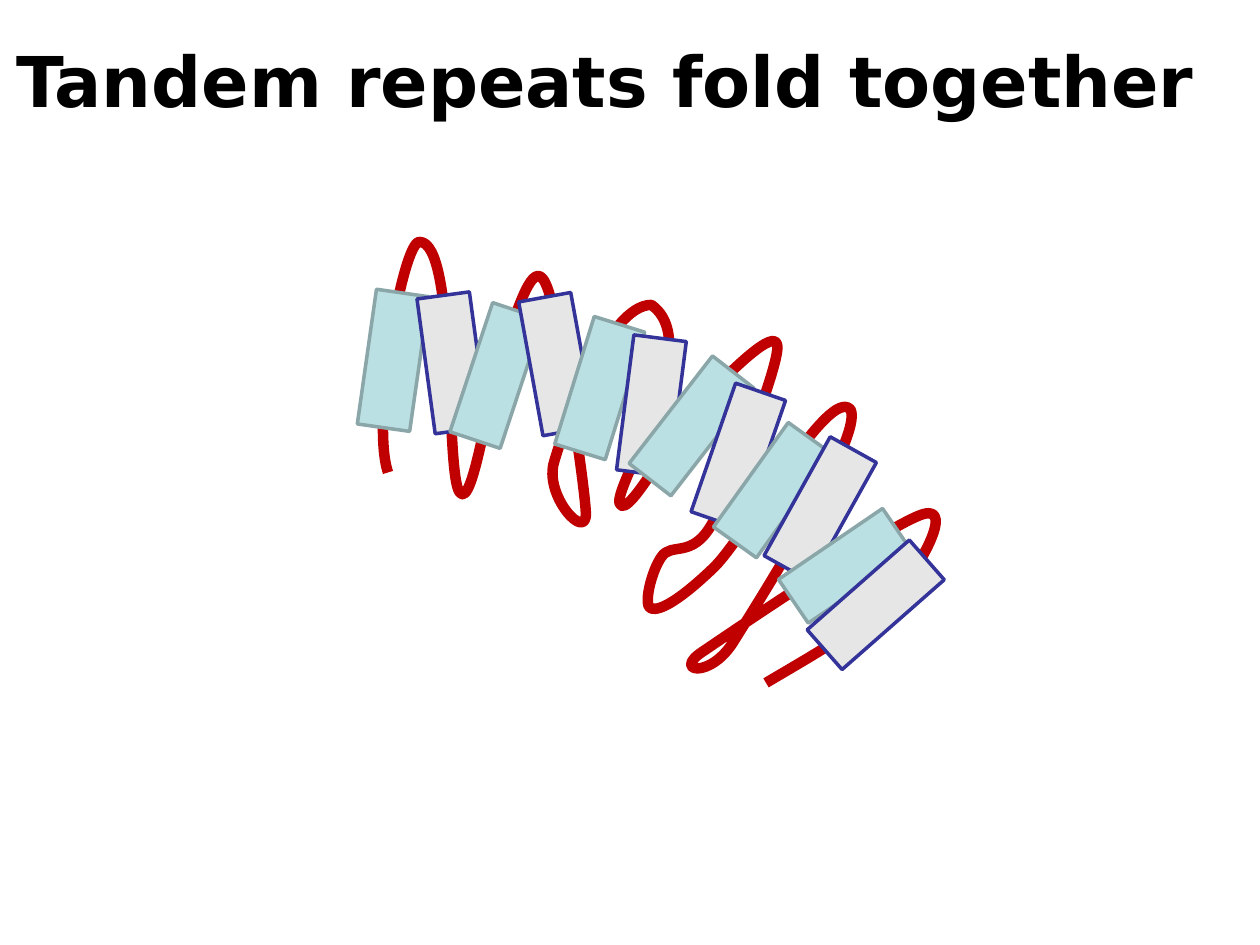
from dataclasses import dataclass

import pptx
import pptx.dml.color
import pptx.enum.shapes
import pptx.enum.text
import pptx.oxml
import pptx.oxml.ns
import pptx.util
from pptx.util import Inches


@dataclass(frozen=True)
class Theme:
    font: str = "DejaVu Sans"
    title_size: int = 40
    text: str = "000000"
    chain: str = "C00000"
    chain_width: float = 6
    first_helix: tuple = ("BBE0E3", "8AA6A8")
    second_helix: tuple = ("E6E6E6", "333399")
    helix_line_width: float = 2


THEME = Theme()
HELIX_WIDTH = 0.42

# Each repeat is two helices: left, top, length, rotation
REPEATS = [
    ((2.58, 2.65, 1.08, 278.1), (3.05, 2.67, 1.08, 82.3)),
    ((3.40, 2.77, 1.08, 288.3), (3.88, 2.68, 1.08, 79.7)),
    ((4.23, 2.87, 1.06, 287.2), (4.63, 3.01, 1.08, 97.3)),
    ((4.95, 3.17, 1.08, 307.8), (5.32, 3.41, 1.08, 109.1)),
    ((5.62, 3.68, 1.02, 305.6), (5.97, 3.83, 1.08, 299.1)),
    ((6.21, 4.28, 1.00, 325.7), (6.41, 4.59, 1.08, 318.7)),
]

# Start of the chain, then two control points and an end point for each curve
CHAIN_START = (3.08, 3.75)
CHAIN_CURVES = [
    ((2.94, 3.34), (3.20, 1.91), (3.33, 1.92)),
    ((3.63, 1.92), (3.53, 3.77), (3.65, 3.91)),
    ((3.76, 4.05), (3.89, 3.03), (4.00, 2.75)),
    ((4.11, 2.47), (4.23, 2.03), (4.33, 2.25)),
    ((4.44, 2.47), (4.64, 3.84), (4.65, 4.07)),
    ((4.66, 4.31), (4.31, 3.93), (4.40, 3.66)),
    ((4.48, 3.38), (4.83, 2.42), (5.17, 2.42)),
    ((5.62, 2.74), (4.85, 3.88), (4.92, 4.00)),
    ((4.99, 4.13), (5.37, 3.38), (5.58, 3.17)),
    ((5.79, 2.96), (6.16, 2.58), (6.17, 2.75)),
    ((6.18, 2.92), (5.80, 3.88), (5.65, 4.16)),
    ((5.49, 4.44), (5.33, 4.30), (5.25, 4.42)),
    ((5.17, 4.53), (5.10, 4.82), (5.17, 4.83)),
    ((5.24, 4.85), (5.40, 4.76), (5.67, 4.50)),
    ((5.93, 4.24), (6.58, 3.06), (6.75, 3.25)),
    ((6.86, 3.45), (6.03, 4.76), (5.83, 5.08)),
    ((5.64, 5.40), (5.33, 5.33), (5.58, 5.17)),
    ((5.83, 5.00), (7.08, 4.15), (7.33, 4.08)),
    ((7.58, 4.01), (7.29, 4.53), (7.08, 4.75)),
    ((6.87, 4.97), (6.33, 5.27), (6.08, 5.42)),
]


def rgb(value):
    return pptx.dml.color.RGBColor.from_string(value)


def write_text(text_frame, text, *, size, color, bold=False, alignment=None):
    paragraph = text_frame.paragraphs[0]
    paragraph.alignment = alignment
    run = paragraph.add_run()
    run.text = text
    run.font.name = THEME.font
    run.font.size = pptx.util.Pt(size)
    run.font.bold = bold
    run.font.color.rgb = rgb(color)


def set_line(shape, color, width):
    shape.shadow.inherit = False
    shape.line.color.rgb = rgb(color)
    shape.line.width = pptx.util.Pt(width)


def add_title(slide, text):
    title = slide.shapes.title
    title.left, title.top = Inches(0), Inches(0.25)
    title.width, title.height = Inches(9.6), Inches(0.77)
    frame = title.text_frame
    frame.word_wrap = False
    frame.auto_size = pptx.enum.text.MSO_AUTO_SIZE.SHAPE_TO_FIT_TEXT
    frame.vertical_anchor = pptx.enum.text.MSO_ANCHOR.TOP
    write_text(frame, text, size=THEME.title_size, color=THEME.text, bold=True,
               alignment=pptx.enum.text.PP_ALIGN.CENTER)


def add_chain(slide):
    start_x, start_y = map(Inches, CHAIN_START)
    builder = slide.shapes.build_freeform(start_x, start_y)
    builder.add_line_segments(
        [(Inches(x), Inches(y)) for curve in CHAIN_CURVES for x, y in curve],
        close=False)
    chain = builder.convert_to_shape()
    chain.fill.background()
    set_line(chain, THEME.chain, THEME.chain_width)

    # Merge every three straight segments into one Bézier curve
    qn = pptx.oxml.ns.qn
    segments = list(chain.element.iter(qn("a:lnTo")))
    for index in range(0, len(segments), 3):
        curve = pptx.oxml.parse_xml(
            f"<a:cubicBezTo {pptx.oxml.ns.nsdecls('a')}/>")
        segments[index].addprevious(curve)
        for segment in segments[index:index + 3]:
            curve.append(segment.find(qn("a:pt")))
            segment.getparent().remove(segment)


def add_helix(group, left, top, length, rotation, colors):
    fill, line = colors
    helix = group.shapes.add_shape(
        pptx.enum.shapes.MSO_SHAPE.RECTANGLE,
        Inches(left), Inches(top), Inches(length), Inches(HELIX_WIDTH))
    helix.rotation = rotation
    helix.fill.solid()
    helix.fill.fore_color.rgb = rgb(fill)
    set_line(helix, line, THEME.helix_line_width)


def add_repeat(slide, helices):
    group = slide.shapes.add_group_shape()
    for helix, colors in zip(helices, (THEME.first_helix, THEME.second_helix)):
        add_helix(group, *helix, colors)


def main():
    presentation = pptx.Presentation()
    presentation.slide_width = Inches(10)
    presentation.slide_height = Inches(7.5)
    slide = presentation.slides.add_slide(presentation.slide_layouts[5])

    add_title(slide, "Tandem repeats fold together")
    # The chain runs behind the helices
    add_chain(slide)
    for helices in REPEATS:
        add_repeat(slide, helices)

    presentation.save("out.pptx")


if __name__ == "__main__":
    main()
